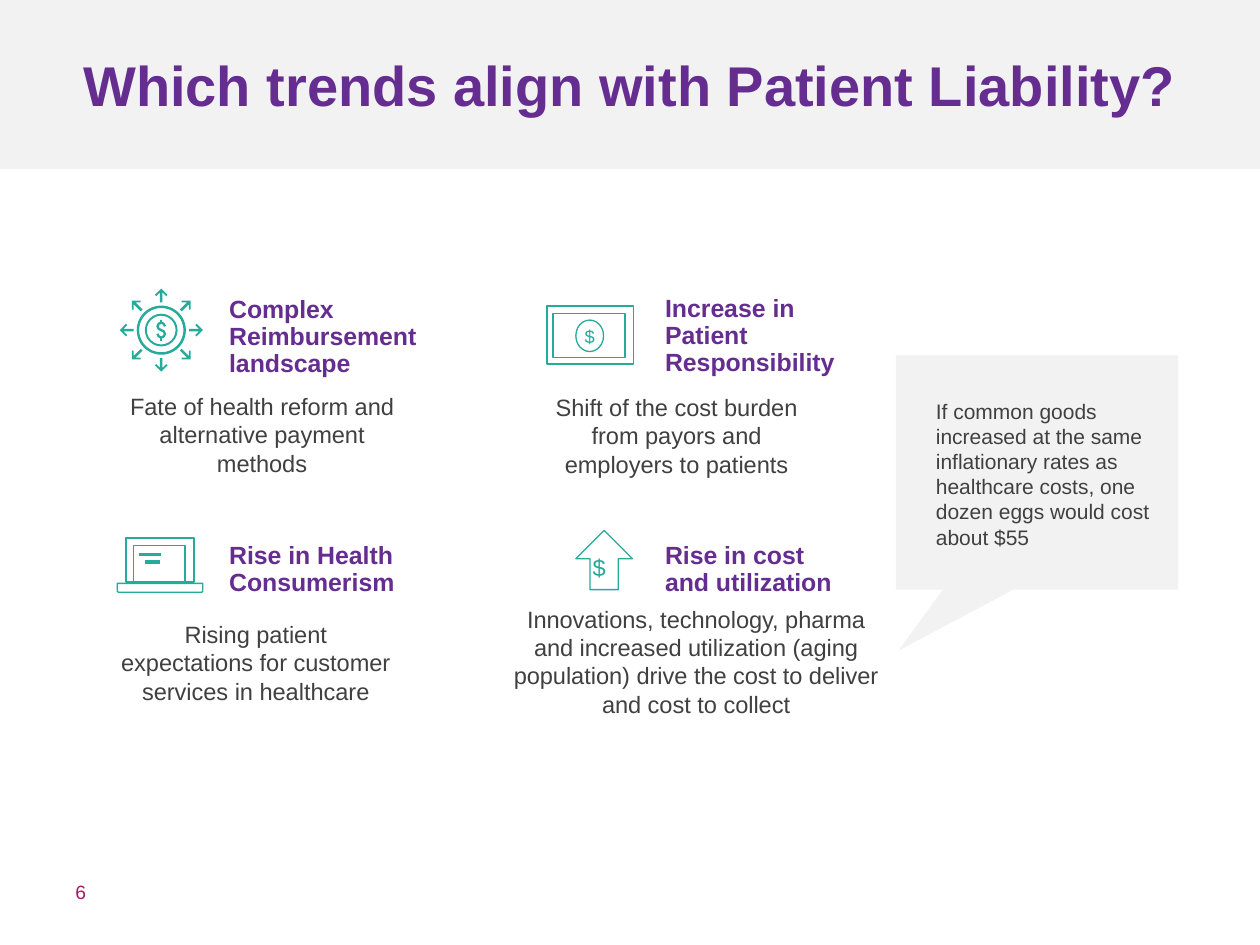
"""Build the slide on trends that align with patient liability."""
import math

from lxml import etree
from pptx import Presentation
from pptx.dml.color import RGBColor
from pptx.enum.shapes import MSO_CONNECTOR, MSO_SHAPE
from pptx.enum.text import MSO_ANCHOR, PP_ALIGN
from pptx.oxml.ns import qn
from pptx.util import Inches, Pt

RECTANGLE, OVAL, DONUT = MSO_SHAPE.RECTANGLE, MSO_SHAPE.OVAL, MSO_SHAPE.DONUT
UP_ARROW, ROUNDED_TOP = MSO_SHAPE.UP_ARROW, MSO_SHAPE.ROUND_2_SAME_RECTANGLE
CALLOUT, STRAIGHT = MSO_SHAPE.RECTANGULAR_CALLOUT, MSO_CONNECTOR.STRAIGHT
LEFT, CENTER = PP_ALIGN.LEFT, PP_ALIGN.CENTER
TOP, MIDDLE, BOTTOM = MSO_ANCHOR.TOP, MSO_ANCHOR.MIDDLE, MSO_ANCHOR.BOTTOM
PURPLE, TEAL, DARK, PALE, MAGENTA = "662D91", "26AB9A", "404040", "F2F2F2", "9E1F63"
color = RGBColor.from_string


def paint(shape, fill=None, line=None, width=0.75):
    shape.shadow.inherit = False
    if fill:
        shape.fill.solid()
        shape.fill.fore_color.rgb = color(fill)
    else:
        shape.fill.background()
    if line:
        shape.line.color.rgb = color(line)
        shape.line.width = Pt(width)
    else:
        shape.line.fill.background()


def write(shape, text, size, ink, align=LEFT, anchor=TOP, bold=False, spacing=None):
    frame = shape.text_frame
    frame.word_wrap = True
    frame.vertical_anchor = anchor
    para = frame.paragraphs[0]
    para.text = text
    para.alignment = align
    para.line_spacing = spacing
    para.font.name = "Arial"
    para.font.size = Pt(size)
    para.font.bold = bold
    para.font.color.rgb = color(ink)


deck = Presentation()
deck.slide_width, deck.slide_height = Inches(10), Inches(7.5)
page = deck.slides.add_slide(deck.slide_layouts[6])
shapes = page.shapes

header = shapes.add_shape(RECTANGLE, 0, Inches(-0.01), Inches(10), Inches(1.35))
paint(header, PALE)
title = shapes.add_textbox(0, 0, Inches(10), Inches(1.34))
write(title, "Which trends align with Patient Liability?", 32, PURPLE, CENTER, MIDDLE, True)

headings = [
    (1.72, 2.31, 1.99, 0.75, "Complex\nReimbursement landscape"),
    (5.18, 2.3, 1.81, 0.75, "Increase in\nPatient Responsibility"),
    (1.72, 4.26, 1.99, 0.53, "Rise in Health Consumerism"),
    (5.18, 4.26, 2.12, 0.53, "Rise in cost\nand utilization"),
]
for left, top, width, height, text in headings:
    box = shapes.add_textbox(Inches(left), Inches(top), Inches(width), Inches(height))
    write(box, text, 14.2, PURPLE, bold=True, spacing=0.9)

details = [
    (0.87, 3.06, 2.42, 0.78, "Fate of health reform and alternative payment methods"),
    (4.16, 3.07, 2.42, 0.78, "Shift of the cost burden from payors and employers to patients"),
    (0.82, 4.87, 2.42, 0.78, "Rising patient expectations for customer services in healthcare"),
    (3.94, 4.75, 3.17, 1.01, "Innovations, technology, pharma\nand increased utilization "
     "(aging population) drive the cost to deliver and cost to collect"),
]
for left, top, width, height, text in details:
    box = shapes.add_textbox(Inches(left), Inches(top), Inches(width), Inches(height))
    write(box, text, 13.5, DARK, CENTER)

banknote = shapes.add_group_shape().shapes
laptop = shapes.add_group_shape().shapes
coin = shapes.add_group_shape().shapes
outlines = [
    (banknote, RECTANGLE, 4.34, 2.43, 0.69, 0.46, None),
    (banknote, RECTANGLE, 4.39, 2.49, 0.57, 0.35, None),
    (banknote, OVAL, 4.57, 2.54, 0.22, 0.25, 10.5),
    (shapes, UP_ARROW, 4.57, 4.21, 0.45, 0.47, 13.5),
    (laptop, RECTANGLE, 1, 4.27, 0.54, 0.35, None),
    (laptop, RECTANGLE, 1.06, 4.33, 0.41, 0.29, None),
    (laptop, ROUNDED_TOP, 0.93, 4.63, 0.68, 0.07, None),
]
for parent, kind, left, top, width, height, dollar_size in outlines:
    icon = parent.add_shape(kind, Inches(left), Inches(top), Inches(width), Inches(height))
    paint(icon, line=TEAL)
    if kind == ROUNDED_TOP:
        icon.rotation = 180
    if dollar_size:
        write(icon, "$", dollar_size, TEAL, CENTER, MIDDLE)
        frame = icon.text_frame
        frame.word_wrap = False
        frame.margin_left = frame.margin_top = frame.margin_bottom = 0
        frame.margin_right = Inches(0.08) if kind == UP_ARROW else 0

center_x, center_y = 1.28, 2.62
for diameter, thickness in [(0.39, 0.05), (0.26, 0.06)]:
    ring = coin.add_shape(DONUT, Inches(center_x - diameter / 2), Inches(center_y - diameter / 2),
                          Inches(diameter), Inches(diameter))
    ring.adjustments[0] = thickness
    paint(ring, TEAL)

arrow_half = [(0.33, 0), (0.28, 0.05), (0.27, 0.04), (0.3, 0.01), (0.22, 0.01)]
arrow = arrow_half + [(along, -across) for along, across in arrow_half[:0:-1]]
for step in range(8):
    cosine, sine = math.cos(step * math.pi / 4), math.sin(step * math.pi / 4)
    points = [(Inches(center_x + along * cosine - across * sine),
               Inches(center_y + along * sine + across * cosine)) for along, across in arrow]
    builder = coin.build_freeform(*points[0])
    builder.add_line_segments(points[1:], close=True)
    paint(builder.convert_to_shape(), TEAL)

curve_half = [(0.03, -0.03), (0.02, -0.05), (0, -0.06), (-0.02, -0.05), (-0.03, -0.03), (-0.02, -0.01)]
curve = curve_half + [(-x, -y) for x, y in reversed(curve_half)]
points = [(Inches(center_x + x), Inches(center_y + y)) for x, y in curve]
builder = coin.build_freeform(*points[0])
builder.add_line_segments(points[1:], close=False)
paint(builder.convert_to_shape(), line=TEAL, width=1.3)

strokes = [
    (laptop, 1.1, 4.4, 1.28, 4.4, 2),
    (laptop, 1.15, 4.46, 1.27, 4.46, 2),
    (coin, 1.28, 2.54, 1.28, 2.56, 1.2),
    (coin, 1.28, 2.68, 1.28, 2.71, 1.2),
]
for parent, start_x, start_y, end_x, end_y, width in strokes:
    stroke = parent.add_connector(STRAIGHT, Inches(start_x), Inches(start_y), Inches(end_x), Inches(end_y))
    stroke.line.color.rgb = color(TEAL)
    stroke.line.width = Pt(width)
    etree.SubElement(stroke.element.spPr, qn("a:effectLst"))

callout = shapes.add_shape(CALLOUT, Inches(7.11), Inches(2.82), Inches(2.24), Inches(1.86))
callout.adjustments[0], callout.adjustments[1] = -0.49, 0.76
paint(callout, PALE)
remark = shapes.add_textbox(Inches(7.33), Inches(3.11), Inches(1.9), Inches(1.31))
write(remark, "If common goods increased at the same inflationary rates as healthcare costs, "
      "one dozen eggs would cost about $55", 12, DARK)

page_number = shapes.add_textbox(Inches(0.5), Inches(7), Inches(0.63), Inches(0.22))
write(page_number, "6", 11, MAGENTA, anchor=BOTTOM)

deck.save("out.pptx")
